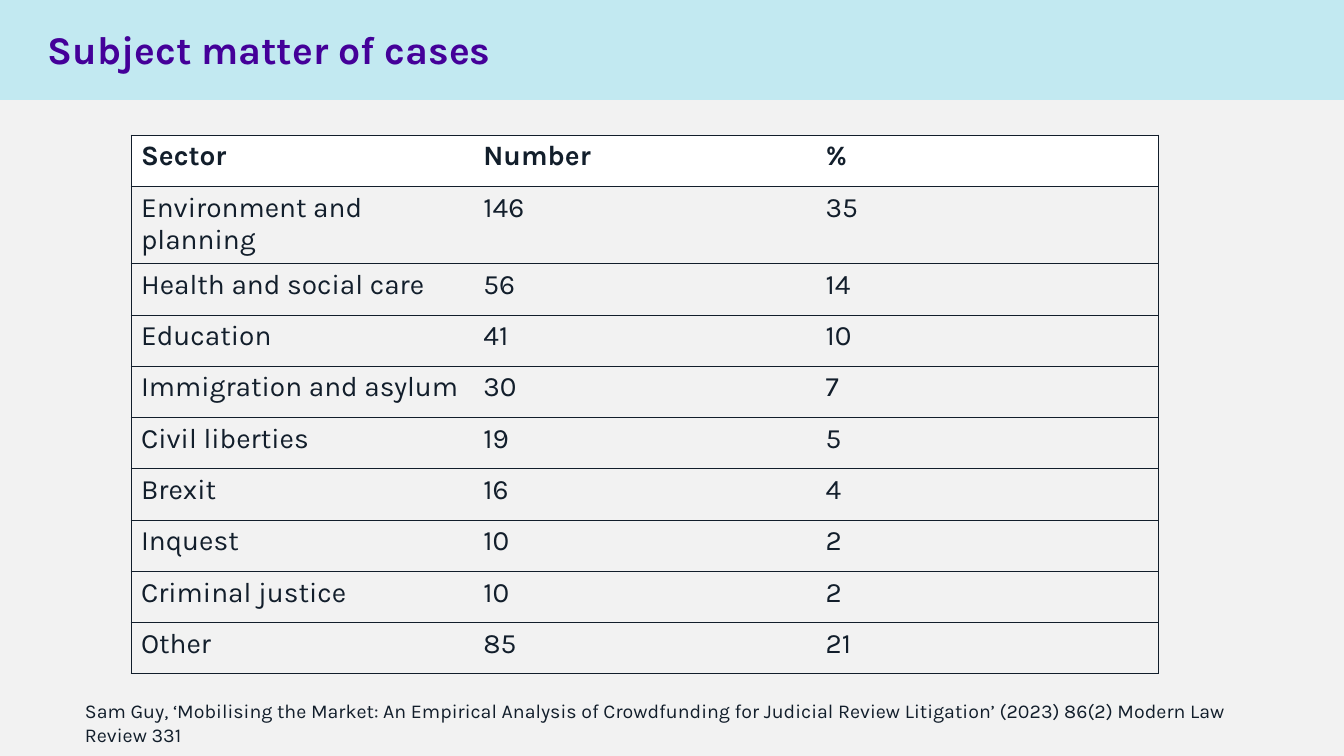
from dataclasses import dataclass

from lxml.etree import SubElement
from pptx import Presentation
from pptx.dml.color import RGBColor
from pptx.enum.shapes import MSO_SHAPE
from pptx.enum.text import MSO_ANCHOR
from pptx.oxml.ns import qn
from pptx.util import Pt

SCALE = 12192000 / 1344


@dataclass(frozen=True)
class Theme:
    font: str = "Karla"
    ink: str = "121E2B"
    title: str = "440099"
    band: str = "C2E9F1"
    page: str = "F2F2F2"
    header: str = "FFFFFF"
    title_size: int = 28
    table_size: int = 20
    source_size: int = 14
    rule_width: float = 0.5


THEME = Theme()

CASES = [
    ("Sector", "Number", "%"),
    ("Environment and planning", "146", "35"),
    ("Health and social care", "56", "14"),
    ("Education", "41", "10"),
    ("Immigration and asylum", "30", "7"),
    ("Civil liberties", "19", "5"),
    ("Brexit", "16", "4"),
    ("Inquest", "10", "2"),
    ("Criminal justice", "10", "2"),
    ("Other", "85", "21"),
]
SOURCE = (
    "Sam Guy, ‘Mobilising the Market: An Empirical Analysis of Crowdfunding "
    "for Judicial Review Litigation’ (2023) 86(2) Modern Law Review 331"
)


def px(length):
    return round(length * SCALE)


def paint(fill, color):
    fill.solid()
    fill.fore_color.rgb = RGBColor.from_string(color)


def write(frame, text, size, color=THEME.ink, bold=False, spacing=None):
    para = frame.paragraphs[0]
    para.line_spacing = spacing
    span = para.add_run()
    span.text = text
    span.font.name = THEME.font
    span.font.size = Pt(size)
    span.font.bold = bold
    span.font.color.rgb = RGBColor.from_string(color)


def add_text(page, box, text, anchor=MSO_ANCHOR.TOP, **style):
    frame = page.shapes.add_textbox(*map(px, box)).text_frame
    frame.word_wrap = True
    frame.vertical_anchor = anchor
    write(frame, text, **style)


def set_borders(cell, visible):
    properties = cell._tc.get_or_add_tcPr()
    for side in "LRTB":
        line = SubElement(properties, qn(f"a:ln{side}"), w=str(Pt(THEME.rule_width)))
        if side in visible:
            fill = SubElement(line, qn("a:solidFill"))
            SubElement(fill, qn("a:srgbClr"), val=THEME.ink)
        else:
            SubElement(line, qn("a:noFill"))


def add_header(page, box, title):
    left, top, width, height = box
    band = page.shapes.add_shape(MSO_SHAPE.RECTANGLE, *map(px, box))
    band.shadow.inherit = False
    paint(band.fill, THEME.band)
    band.line.fill.background()
    add_text(page, (left + 38, top + 15, width - 130, height - 27), title,
             anchor=MSO_ANCHOR.MIDDLE, size=THEME.title_size,
             color=THEME.title, bold=True, spacing=0.9)


def add_case_table(page, box, rows):
    columns = len(rows[0])
    table = page.shapes.add_table(len(rows), columns, *map(px, box)).table
    table.first_row = False
    table.horz_banding = False
    for row_index, values in enumerate(rows):
        is_header = row_index == 0
        table.rows[row_index].height = px(box[3] / len(rows))
        for column_index, value in enumerate(values):
            cell = table.cell(row_index, column_index)
            sides = "TB"
            if column_index == 0:
                sides += "L"
            if column_index == columns - 1:
                sides += "R"
            set_borders(cell, sides)
            if is_header:
                paint(cell.fill, THEME.header)
            else:
                cell.fill.background()
            write(cell.text_frame, value, size=THEME.table_size, bold=is_header)


def build_table_slide(deck):
    page = deck.slides.add_slide(deck.slide_layouts[6])
    paint(page.background.fill, THEME.page)
    add_header(page, (0, 0, 1344, 100), "Subject matter of cases")
    add_text(page, (75, 694, 1194, 34), SOURCE, size=THEME.source_size)
    add_case_table(page, (131, 135, 1027, 513), CASES)


def main():
    deck = Presentation()
    deck.slide_width, deck.slide_height = px(1344), px(756)
    build_table_slide(deck)
    deck.save("out.pptx")


if __name__ == "__main__":
    main()
